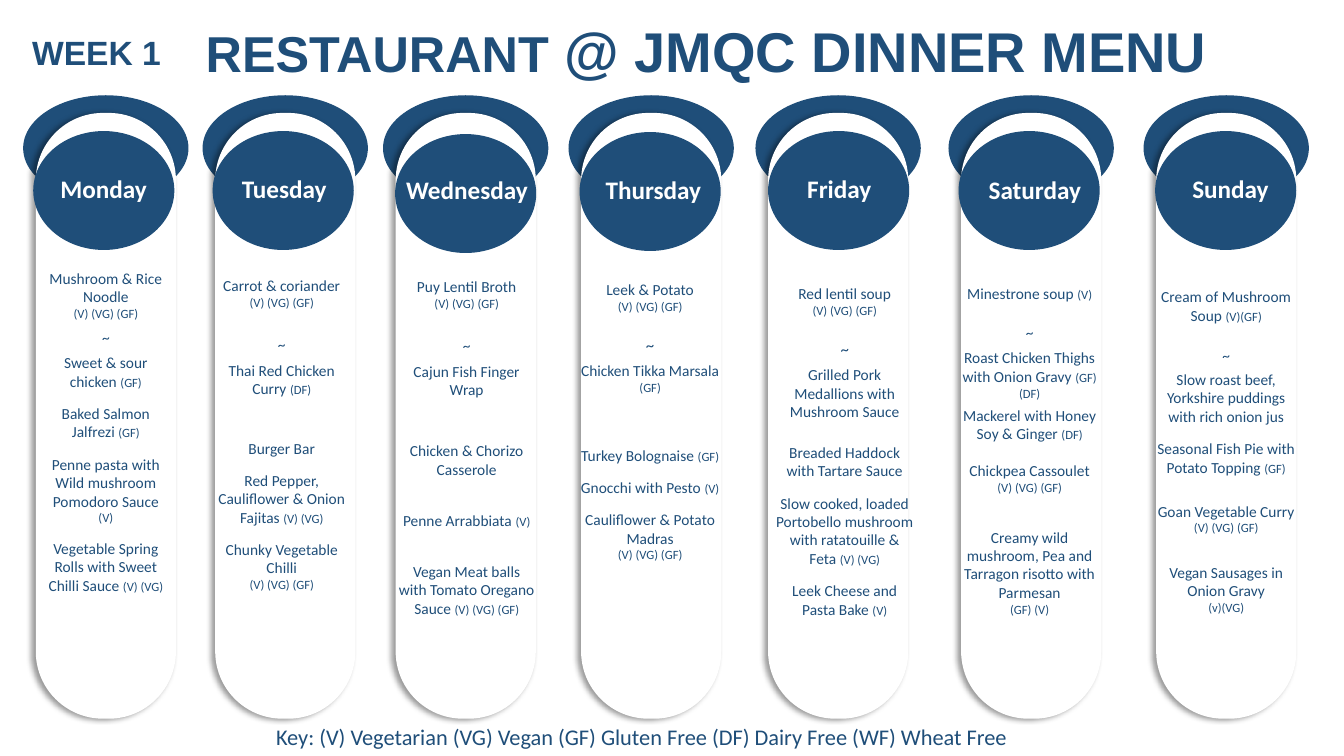
from dataclasses import dataclass

from lxml.etree import SubElement
from pptx import Presentation
from pptx.dml.color import RGBColor
from pptx.enum.shapes import MSO_SHAPE as Preset
from pptx.enum.text import MSO_ANCHOR as Anchor, MSO_AUTO_SIZE as AutoSize, PP_ALIGN as Align
from pptx.oxml.ns import qn
from pptx.shapes.autoshape import Shape
from pptx.slide import Slide
from pptx.text.text import TextFrame, _Run as Run
from pptx.util import Inches, Length, Pt


@dataclass(frozen=True)
class Theme:
    navy: RGBColor = RGBColor(0x1F, 0x4E, 0x79)
    white: RGBColor = RGBColor(0xFF, 0xFF, 0xFF)
    heading_font: str = "Arial"
    body_font: str = "Calibri"
    title_size: int = 36
    title_large_size: int = 40
    week_size: int = 24
    day_size: int = 18
    key_size: int = 16
    dish_size: int = 11
    marks_size: int = 9
    line_height: float = 1.22


@dataclass(frozen=True)
class Box:
    """Left, top, width and height in cells of the slide grid."""
    left: float
    top: float
    width: float
    height: float


@dataclass(frozen=True)
class Line:
    """A menu line with its diet marks; gap is the height, in type size, left above it."""
    dish: str = ""
    marks: str = ""
    gap: int = 0
    size: int = Theme.dish_size


@dataclass(frozen=True)
class Day:
    name: str
    center: float
    badge_center: float
    badge_top: float
    label: Box
    menu: Box
    lines: tuple[Line, ...]


THEME = Theme()
CELL = 0.1  # inches; the slide is 133.33 columns by 75 rows
COLUMNS, ROWS = 133.33, 75
BAND_WIDTH, BAND_HEIGHT, BAND_TOP = 16.4, 10.5, 9.45
PILL_WIDTH, PILL_HEIGHT, PILL_TOP = 13.9, 60.1, 11.2
BADGE_WIDTH, BADGE_HEIGHT = 14, 11.8
ALL_MARKS = "(V) (VG) (GF)"

DAYS = (
    Day("Monday", 10.5, 10.3, 13, Box(5, 16.7, 10.7, 4), Box(3.4, 26.2, 14.2, 37.5), (
        Line("Mushroom & Rice Noodle"), Line(marks=ALL_MARKS), Line("~", gap=4),
        Line("Sweet & sour chicken", "(GF)", 4),
        Line("Baked Salmon Jalfrezi", "(GF)", 8),
        Line("Penne pasta with", gap=8), Line("Wild mushroom Pomodoro Sauce", "(V)"),
        Line("Vegetable Spring Rolls with Sweet Chilli Sauce", "(V) (VG)", 8))),
    Day("Tuesday", 28.3, 28.1, 13, Box(23, 16.7, 10.5, 4), Box(20.2, 26.9, 15.5, 38.2), (
        Line("Carrot & coriander"), Line(marks=ALL_MARKS), Line("~", gap=15),
        Line("Thai Red Chicken Curry", "(DF)", 4),
        Line("Burger Bar", gap=24),
        Line("Red Pepper, Cauliflower & Onion Fajitas", "(V) (VG)", 8),
        Line("Chunky Vegetable Chilli", gap=8), Line(marks=ALL_MARKS))),
    Day("Wednesday", 46.2, 46.2, 13.3, Box(39.3, 16.8, 14.2, 4), Box(38.5, 27, 15.6, 44.6), (
        Line("Puy Lentil Broth"), Line(marks=ALL_MARKS), Line("~", gap=15),
        Line("Cajun Fish Finger Wrap", gap=4),
        Line("Chicken & Chorizo Casserole", gap=25),
        Line("Penne Arrabbiata", "(V)", 19),
        Line("Vegan Meat balls with Tomato Oregano Sauce", ALL_MARKS, 19))),
    Day("Thursday", 64.6, 64.5, 13.1, Box(59.1, 16.8, 11.6, 4), Box(56.5, 27.3, 16, 35), (
        Line("Leek & Potato"), Line(marks=ALL_MARKS), Line("~", gap=12, size=12),
        Line("Chicken Tikka Marsala", "(GF)", 4),
        Line("Turkey Bolognaise", "(GF)", 30),
        Line("Gnocchi with Pesto", "(V)", 8),
        Line("Cauliflower & Potato Madras", gap=8), Line(marks=ALL_MARKS))),
    Day("Friday", 83.15, 83.2, 13, Box(79.1, 16.7, 8.4, 4), Box(75.9, 27.7, 15.8, 38), (
        Line("Red lentil soup"), Line(marks=ALL_MARKS), Line("~", gap=12, size=12),
        Line("Grilled Pork Medallions with Mushroom Sauce", gap=4),
        Line("Breaded Haddock with Tartare Sauce", gap=13),
        Line("Slow cooked, loaded Portobello mushroom with ratatouille & Feta", "(V) (VG)", 8),
        Line("Leek Cheese and Pasta Bake", "(V)", 8))),
    Day("Saturday", 102.3, 102.1, 13, Box(97.1, 16.8, 11.3, 4), Box(94.3, 27.7, 15.7, 41.9), (
        Line("Minestrone soup", "(V)"), Line("~", gap=12),
        Line("Roast Chicken Thighs with Onion Gravy", "(GF) (DF)", 4),
        Line("Mackerel with Honey Soy & Ginger", "(DF)", 3),
        Line("Chickpea Cassoulet", gap=11), Line(marks=ALL_MARKS),
        Line("Creamy wild mushroom, Pea and Tarragon risotto with Parmesan", gap=19),
        Line(marks="(GF) (V)"))),
    Day("Sunday", 121.65, 121.6, 13, Box(117.3, 16.7, 9.7, 4), Box(113.8, 28, 15.7, 35.9), (
        Line("Cream of Mushroom"), Line("Soup", "(V)(GF)"), Line("~", gap=13),
        Line("Slow roast beef, Yorkshire puddings with rich onion jus", gap=3),
        Line("Seasonal Fish Pie with Potato Topping", "(GF)", 8),
        Line("Goan Vegetable Curry", gap=15), Line(marks=ALL_MARKS),
        Line("Vegan Sausages in Onion Gravy", gap=16), Line(marks="(v)(VG)"))),
)


def cells(count: float) -> Length:
    return Inches(count * CELL)


def place(box: Box) -> tuple[Length, ...]:
    return tuple(cells(side) for side in (box.left, box.top, box.width, box.height))


def format_run(run: Run, size: int, color: RGBColor = THEME.navy,
               font: str = THEME.body_font, bold: bool = False) -> None:
    run.font.name, run.font.size, run.font.bold = font, Pt(size), bold
    run.font.color.rgb = color


def add_text_frame(slide: Slide, box: Box, wrap: bool = True) -> TextFrame:
    text_frame = slide.shapes.add_textbox(*place(box)).text_frame
    text_frame.word_wrap = wrap
    return text_frame


def add_label(slide: Slide, box: Box, text: str, size: int, color: RGBColor = THEME.navy,
              font: str = THEME.body_font, bold: bool = False, wrap: bool = True) -> None:
    text_frame = add_text_frame(slide, box, wrap)
    text_frame.text = text
    format_run(text_frame.paragraphs[0].runs[0], size, color, font, bold)


def add_filled(slide: Slide, preset: Preset, box: Box, color: RGBColor) -> Shape:
    shape = slide.shapes.add_shape(preset, *place(box))
    shape.shadow.inherit = False
    shape.fill.solid()
    shape.fill.fore_color.rgb = color
    shape.line.fill.background()
    return shape


def add_upright(slide: Slide, preset: Preset, center: float, top: float,
                width: float, height: float, color: RGBColor) -> Shape:
    """Add a shape turned by 270 degrees that covers the given width and height."""
    middle = top + height / 2
    box = Box(center - height / 2, middle - width / 2, height, width)
    shape = add_filled(slide, preset, box, color)
    shape.rotation = 270
    return shape


def cast_shadow_left(shape: Shape) -> None:
    effects = shape._element.spPr.find(qn("a:effectLst"))
    shadow = SubElement(effects, qn("a:outerShdw"), blurRad=str(Pt(4)), dist=str(Pt(3)),
                        dir=str(180 * 60000), algn="r", rotWithShape="0")
    color = SubElement(shadow, qn("a:srgbClr"), val="000000")
    SubElement(color, qn("a:alpha"), val="40000")


def add_menu(slide: Slide, day: Day) -> None:
    text_frame = add_text_frame(slide, day.menu)
    for index, line in enumerate(day.lines):
        paragraph = text_frame.add_paragraph() if index else text_frame.paragraphs[0]
        paragraph.alignment = Align.CENTER
        paragraph.space_before = Pt(line.gap * THEME.line_height)
        if line.dish:
            paragraph.text = f"{line.dish} " if line.marks else line.dish
            format_run(paragraph.runs[0], line.size)
        if line.marks:
            marks = paragraph.add_run()
            marks.text = line.marks
            format_run(marks, THEME.marks_size)


def add_day(slide: Slide, day: Day) -> None:
    add_upright(slide, Preset.OVAL, day.center, BAND_TOP, BAND_WIDTH, BAND_HEIGHT, THEME.navy)
    pill = add_upright(slide, Preset.ROUNDED_RECTANGLE, day.center, PILL_TOP,
                       PILL_WIDTH, PILL_HEIGHT, THEME.white)
    pill.adjustments[0] = 0.48
    cast_shadow_left(pill)
    add_menu(slide, day)
    badge = Box(day.badge_center - BADGE_WIDTH / 2, day.badge_top, BADGE_WIDTH, BADGE_HEIGHT)
    add_filled(slide, Preset.OVAL, badge, THEME.navy)
    add_label(slide, day.label, day.name, THEME.day_size, THEME.white, bold=True, wrap=False)


def set_title(slide: Slide) -> None:
    title = slide.shapes.title
    title.left, title.top, title.width, title.height = place(Box(19.4, 1.1, 106.6, 7.7))
    text_frame = title.text_frame
    text_frame.auto_size, text_frame.word_wrap = AutoSize.NONE, False
    text_frame.vertical_anchor = Anchor.TOP
    text_frame.text = "RESTAURANT"
    paragraph = text_frame.paragraphs[0]
    paragraph.alignment = Align.LEFT
    paragraph.add_run().text = " @ JMQC DINNER MENU"
    for run, size in zip(paragraph.runs, (THEME.title_size, THEME.title_large_size)):
        format_run(run, size, font=THEME.heading_font, bold=True)


def main() -> None:
    presentation = Presentation()
    presentation.slide_width, presentation.slide_height = cells(COLUMNS), cells(ROWS)
    slide = presentation.slides.add_slide(presentation.slide_layouts.get_by_name("Title Only"))
    set_title(slide)
    add_label(slide, Box(2.2, 2.7, 15.1, 5), "WEEK 1", THEME.week_size,
              font=THEME.heading_font, bold=True)
    for day in DAYS:
        add_day(slide, day)
    add_label(slide, Box(26.4, 71.3, 75.8, 3.7),
              "Key: (V) Vegetarian (VG) Vegan (GF) Gluten Free (DF) Dairy Free (WF) Wheat Free",
              THEME.key_size)
    presentation.save("out.pptx")


if __name__ == "__main__":
    main()
